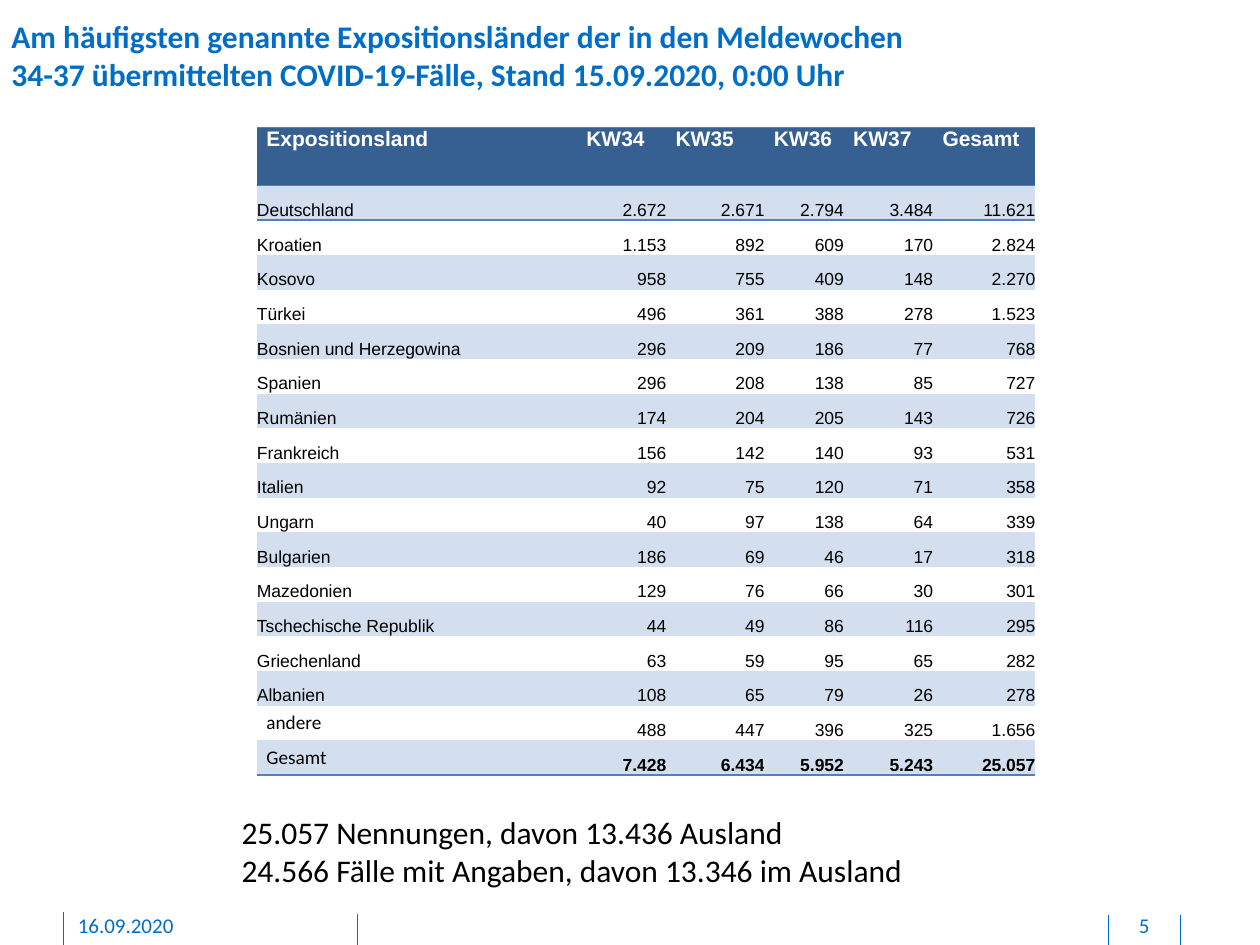
from typing import NamedTuple

from lxml.etree import SubElement
from pptx import Presentation
from pptx.dml.color import RGBColor
from pptx.enum.shapes import MSO_CONNECTOR
from pptx.enum.text import MSO_ANCHOR, MSO_AUTO_SIZE, PP_ALIGN
from pptx.oxml.ns import qn
from pptx.util import Cm, Pt

BLUE = "006EC7"
HEADER_BLUE = "376092"
BAND_BLUE = "D3DFEE"
RULE_BLUE = "4F81BD"
BLACK = "000000"
WHITE = "FFFFFF"
NO_TABLE_STYLE = "{2D5ABB26-0587-4C30-8999-92F81FD0307C}"


class Box(NamedTuple):
    left: float
    top: float
    width: float
    height: float


class Style(NamedTuple):
    size: float
    font: str
    color: str
    bold: bool = False


class Exposure(NamedTuple):
    country: str
    kw34: str
    kw35: str
    kw36: str
    kw37: str
    total: str


class Divider(NamedTuple):
    x: float
    top: float


class FooterItem(NamedTuple):
    text: str
    box: Box
    align: PP_ALIGN


HEADER = Exposure("Expositionsland", "KW34", "KW35", "KW36", "KW37", "Gesamt")
EXPOSURES = [
    Exposure("Deutschland", "2.672", "2.671", "2.794", "3.484", "11.621"),
    Exposure("Kroatien", "1.153", "892", "609", "170", "2.824"),
    Exposure("Kosovo", "958", "755", "409", "148", "2.270"),
    Exposure("Türkei", "496", "361", "388", "278", "1.523"),
    Exposure("Bosnien und Herzegowina", "296", "209", "186", "77", "768"),
    Exposure("Spanien", "296", "208", "138", "85", "727"),
    Exposure("Rumänien", "174", "204", "205", "143", "726"),
    Exposure("Frankreich", "156", "142", "140", "93", "531"),
    Exposure("Italien", "92", "75", "120", "71", "358"),
    Exposure("Ungarn", "40", "97", "138", "64", "339"),
    Exposure("Bulgarien", "186", "69", "46", "17", "318"),
    Exposure("Mazedonien", "129", "76", "66", "30", "301"),
    Exposure("Tschechische Republik", "44", "49", "86", "116", "295"),
    Exposure("Griechenland", "63", "59", "95", "65", "282"),
    Exposure("Albanien", "108", "65", "79", "26", "278"),
    Exposure("andere", "488", "447", "396", "325", "1.656"),
    Exposure("Gesamt", "7.428", "6.434", "5.952", "5.243", "25.057"),
]
COLUMN_WIDTHS = [6.45, 1.8, 1.98, 1.6, 1.8, 2.06]
HEADER_HEIGHT = 1.17
ROW_HEIGHT = 0.7
SUMMARY_ROWS = 2

DIVIDERS = [Divider(7.21, 18.42), Divider(1.27, 18.39), Divider(23.8, 18.44), Divider(22.35, 18.44)]
FOOTER = [
    FooterItem("16.09.2020", Box(1.57, 18.39, 5.16, 0.53), PP_ALIGN.LEFT),
    FooterItem("5", Box(22.38, 18.39, 1.37, 0.53), PP_ALIGN.CENTER),
]
NOTES = [
    "25.057 Nennungen, davon 13.436 Ausland",
    "24.566 Fälle mit Angaben, davon 13.346 im Ausland",
]
SLIDE_HEIGHT = 19.05


def rgb(color: str) -> RGBColor:
    return RGBColor.from_string(color)


def lengths(box: Box) -> list:
    return [Cm(value) for value in box]


def add_run(paragraph, text: str, style: Style, align=PP_ALIGN.LEFT) -> None:
    paragraph.alignment = align
    run = paragraph.add_run()
    run.text = text
    run.font.size = Pt(style.size)
    run.font.name = style.font
    run.font.bold = style.bold
    run.font.color.rgb = rgb(style.color)


def set_margins(target, side: float, bottom: float = 0) -> None:
    target.margin_left = target.margin_right = Cm(side)
    target.margin_top = 0
    target.margin_bottom = Cm(bottom)


def draw_title(slide) -> None:
    title = slide.shapes.title
    title.left, title.top, title.width, title.height = lengths(Box(0.23, 0.33, 18.42, 1.55))
    frame = title.text_frame
    set_margins(frame, 0)
    frame.word_wrap = True
    frame.auto_size = MSO_AUTO_SIZE.SHAPE_TO_FIT_TEXT
    add_run(
        frame.paragraphs[0],
        "Am häufigsten genannte Expositionsländer der in den Meldewochen "
        "34-37 übermittelten COVID-19-Fälle, Stand 15.09.2020, 0:00 Uhr",
        Style(18, "Calibri", BLUE, True),
    )


def draw_divider(slide, divider: Divider) -> None:
    x = Cm(divider.x)
    line = slide.shapes.add_connector(MSO_CONNECTOR.STRAIGHT, x, Cm(divider.top), x, Cm(SLIDE_HEIGHT))
    line.line.color.rgb = rgb(BLUE)
    line.line.width = Pt(0.5)
    SubElement(line._element.spPr, qn("a:effectLst"))


def draw_footer_item(slide, item: FooterItem) -> None:
    frame = slide.shapes.add_textbox(*lengths(item.box)).text_frame
    frame.word_wrap = True
    set_margins(frame, 0, 0.13)
    add_run(frame.paragraphs[0], item.text, Style(12, "Calibri", BLUE), item.align)


def add_border(cell, edge: str) -> None:
    line = SubElement(cell._tc.get_or_add_tcPr(), qn(f"a:{edge}"), w=str(Pt(1)))
    fill = SubElement(line, qn("a:solidFill"))
    SubElement(fill, qn("a:srgbClr"), val=RULE_BLUE)


def draw_cell(cell, text: str, style: Style, align, anchor, side: float, fill: str, edges: list) -> None:
    set_margins(cell, side)
    cell.vertical_anchor = anchor
    for edge in edges:
        add_border(cell, edge)
    if fill:
        cell.fill.solid()
        cell.fill.fore_color.rgb = rgb(fill)
    else:
        cell.fill.background()
    add_run(cell.text_frame.paragraphs[0], text, style, align)


def draw_exposures(slide) -> None:
    last = len(EXPOSURES)
    box = Box(5.18, 2.57, sum(COLUMN_WIDTHS), HEADER_HEIGHT + ROW_HEIGHT * last)
    table = slide.shapes.add_table(last + 1, len(COLUMN_WIDTHS), *lengths(box)).table
    table.first_row = table.horz_banding = False
    table._tbl.tblPr.find(qn("a:tableStyleId")).text = NO_TABLE_STYLE
    for column, width in zip(table.columns, COLUMN_WIDTHS):
        column.width = Cm(width)
    for index, row in enumerate(table.rows):
        row.height = Cm(ROW_HEIGHT if index else HEADER_HEIGHT)

    header_style = Style(12, "Arial", WHITE, True)
    for cell, text in zip(table.rows[0].cells, HEADER):
        draw_cell(cell, text, header_style, PP_ALIGN.LEFT, MSO_ANCHOR.TOP, 0.19, HEADER_BLUE, ["lnT", "lnB"])

    for index, exposure in enumerate(EXPOSURES, start=1):
        fill = BAND_BLUE if index % 2 else ""
        edges = {1: ["lnT"], last: ["lnB"]}.get(index, [])
        label, *counts = table.rows[index].cells
        if index > last - SUMMARY_ROWS:
            label_look = Style(11, "Calibri", BLACK), PP_ALIGN.LEFT, MSO_ANCHOR.MIDDLE, 0.19
        else:
            label_look = Style(10, "Arial", BLACK), PP_ALIGN.LEFT, MSO_ANCHOR.BOTTOM, 0
        draw_cell(label, exposure.country, *label_look, fill, edges)
        count_style = Style(10, "Arial", BLACK, index == last)
        for cell, count in zip(counts, exposure[1:]):
            draw_cell(cell, count, count_style, PP_ALIGN.RIGHT, MSO_ANCHOR.BOTTOM, 0, fill, edges)


def draw_notes(slide) -> None:
    frame = slide.shapes.add_textbox(*lengths(Box(4.62, 16.26, 14.33, 1.8))).text_frame
    frame.word_wrap = False
    frame.auto_size = MSO_AUTO_SIZE.SHAPE_TO_FIT_TEXT
    for index, note in enumerate(NOTES):
        paragraph = frame.add_paragraph() if index else frame.paragraphs[0]
        add_run(paragraph, note, Style(18, "Calibri", BLACK))


def main() -> None:
    presentation = Presentation()
    presentation.slide_width = Cm(25.4)
    presentation.slide_height = Cm(SLIDE_HEIGHT)
    slide = presentation.slides.add_slide(presentation.slide_layouts[5])
    for divider in DIVIDERS:
        draw_divider(slide, divider)
    draw_title(slide)
    for item in FOOTER:
        draw_footer_item(slide, item)
    draw_exposures(slide)
    draw_notes(slide)
    presentation.save("out.pptx")


if __name__ == "__main__":
    main()
